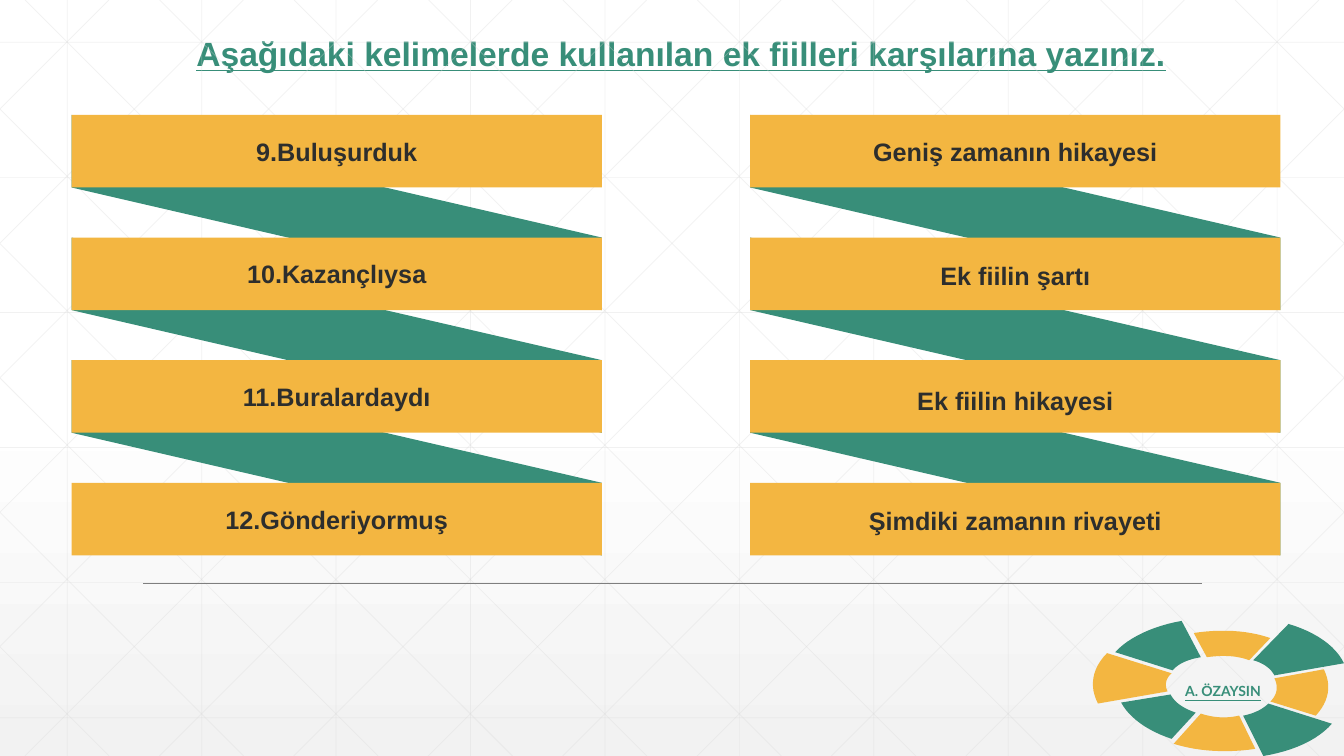
from dataclasses import dataclass

from lxml import etree
from pptx import Presentation
from pptx.dml.color import RGBColor
from pptx.enum.shapes import MSO_CONNECTOR, MSO_SHAPE
from pptx.enum.text import MSO_ANCHOR, PP_ALIGN
from pptx.oxml.ns import qn
from pptx.util import Inches, Pt

STRAIGHT = MSO_CONNECTOR.STRAIGHT
RECTANGLE = MSO_SHAPE.RECTANGLE
CENTER = PP_ALIGN.CENTER
MIDDLE = MSO_ANCHOR.MIDDLE
PAGE_WIDTH, PAGE_HEIGHT = 13.33, 7.5


@dataclass(frozen=True)
class Theme:
    green: str = "388E79"
    amber: str = "F3B641"
    ink: str = "2D2E2D"
    grid: str = "D9D9D9"
    rule: str = "7F7F7F"
    white: str = "FFFFFF"
    mist: str = "F2F2F2"
    font: str = "Arial"
    badge_font: str = "Lato"
    title_size: int = 24
    label_size: int = 18
    badge_size: int = 10


THEME = Theme()

QUESTIONS = [("9.Buluşurduk", 0), ("10.Kazançlıysa", 0),
             ("11.Buralardaydı", 0), ("12.Gönderiyormuş", 0)]
# Each label with its small downward shift
ANSWERS = [("Geniş zamanın hikayesi", 0), ("Ek fiilin şartı", 0.02),
           ("Ek fiilin hikayesi", 0.04), ("Şimdiki zamanın rivayeti", 0.01)]

# Ring segments in turn: two Bézier edges, relative to the ring's corner
RING_SEGMENTS = [
    [[(1.84, .54), (1.81, .48), (1.74, .42), (1.63, .39)],
     [(1.98, .03), (2.25, .11), (2.45, .25), (2.53, .42)]],
    [[(1.59, .39), (1.46, .34), (1.31, .34), (1.17, .36)],
     [(1.04, .12), (1.3, .08), (1.57, .09), (1.8, .17)]],
    [[(.26, .31), (.4, .16), (.64, .05), (.92, 0)],
     [(1.11, .36), (.99, .38), (.89, .42), (.83, .49)]],
    [[(.09, .82), (0, .65), (.03, .47), (.18, .32)],
     [(.82, .52), (.76, .57), (.75, .64), (.78, .7)]],
    [[(.82, 1.17), (.58, 1.09), (.4, .96), (.32, .81)],
     [(.81, .73), (.85, .81), (.94, .87), (1.06, .91)]],
    [[(1.65, 1.27), (1.38, 1.31), (1.1, 1.3), (.84, 1.22)],
     [(1.11, .92), (1.23, .96), (1.36, .97), (1.49, .94)]],
    [[(2.41, 1.02), (2.27, 1.18), (2.03, 1.29), (1.73, 1.34)],
     [(1.53, .94), (1.63, .92), (1.72, .88), (1.78, .82)]],
    [[(1.8, .8), (1.87, .73), (1.88, .65), (1.84, .57)],
     [(2.33, .48), (2.41, .64), (2.38, .8), (2.25, .94)]],
]


def paint(shape, color):
    shape.shadow.inherit = False
    shape.fill.solid()
    shape.fill.fore_color.rgb = RGBColor.from_string(color)
    shape.line.fill.background()


def add_polygon(page, points, color):
    corners = [(Inches(x), Inches(y)) for x, y in points]
    builder = page.shapes.build_freeform(*corners[0], scale=1.0)
    builder.add_line_segments(corners[1:], close=True)
    paint(builder.convert_to_shape(), color)


def add_line(page, start, end, *, color, width, alpha=None):
    line = page.shapes.add_connector(
        STRAIGHT, *(Inches(value) for value in (*start, *end)))
    line.line.width = Pt(width)
    line.line.color.rgb = RGBColor.from_string(color)
    properties = line._element.spPr
    if alpha:
        tint = next(properties.iter(qn("a:srgbClr")))
        etree.SubElement(tint, qn("a:alpha")).set("val", str(alpha * 1000))
    etree.SubElement(properties, qn("a:effectLst"))


def write_text(shape, text, *, size, color, font=THEME.font, underline=False,
               wrap=True):
    frame = shape.text_frame
    frame.word_wrap = wrap
    frame.vertical_anchor = MIDDLE
    para = frame.paragraphs[0]
    para.alignment = CENTER
    span = para.add_run()
    span.text = text
    span.font.name = font
    span.font.size = Pt(size)
    span.font.bold = True
    span.font.underline = underline
    span.font.color.rgb = RGBColor.from_string(color)


def add_label(page, text, left, top, width, height, **style):
    box = page.shapes.add_textbox(*map(Inches, (left, top, width, height)))
    write_text(box, text, **style)


def draw_backdrop(page, width, height):
    # Soft gradient
    fill = page.background.fill
    fill.gradient()
    fill.gradient_angle = 270
    for stop, position, color in zip(fill.gradient_stops, (0.53, 1),
                                     (THEME.white, THEME.mist)):
        stop.position = position
        stop.color.rgb = RGBColor.from_string(color)

    # Upright, level and crossing grid lines
    step = 4 / 3
    lines = [((step * (i + 0.5), 0), (step * (i + 0.5), height))
             for i in range(10)]
    lines += [((0, 0.42 + 1.34 * i), (width, 0.42 + 1.34 * i))
              for i in range(6)]
    for i in range(-5, 10):
        foot = 0.25 + step * i
        first, last = max(0, foot), min(width, foot + height)
        lines.append(((first, first - foot), (last, last - foot)))
        lines.append(((width - first, first - foot),
                      (width - last, last - foot)))
    for start, end in lines:
        add_line(page, start, end, color=THEME.grid, width=0.5, alpha=35)


def draw_title(page, text, left, top, width, height):
    title = page.shapes.title
    title.left, title.top, title.width, title.height = map(
        Inches, (left, top, width, height))
    write_text(title, text, size=THEME.title_size, color=THEME.green,
               underline=True)


def draw_ribbon(page, labels, left, top, width, height, band=0.72):
    pitch = (height - band) / (len(labels) - 1)
    right = left + width
    tops = [top + pitch * row for row in range(len(labels))]
    # Folds behind the bands
    for upper, lower in zip(tops, tops[1:]):
        add_polygon(page, [(left, upper), (left, upper + band),
                           (right, lower + band), (right, lower)],
                    THEME.green)
    # Bands and their labels
    for band_top in tops:
        paint(page.shapes.add_shape(
            RECTANGLE, *map(Inches, (left, band_top, width, band))),
            THEME.amber)
    for band_top, (text, shift) in zip(tops, labels):
        add_label(page, text, left, band_top + 0.16 + shift, width, 0.4,
                  size=THEME.label_size, color=THEME.ink)


def sample_curve(points, steps=12):
    for i in range(steps + 1):
        t = i / steps
        weights = ((1 - t) ** 3, 3 * t * (1 - t) ** 2,
                   3 * t * t * (1 - t), t ** 3)
        yield tuple(sum(w * point[axis] for w, point in zip(weights, points))
                    for axis in (0, 1))


def draw_ring(page, text, left, top):
    for i, edges in enumerate(RING_SEGMENTS):
        outline = [(left + x, top + y)
                   for edge in edges for x, y in sample_curve(edge)]
        add_polygon(page, outline, THEME.amber if i % 2 else THEME.green)
    add_label(page, text, left + 0.8, top + 0.56, 1.06, 0.27, wrap=False,
              size=THEME.badge_size, color=THEME.green,
              font=THEME.badge_font, underline=True)


def main():
    deck = Presentation()
    deck.slide_width = Inches(PAGE_WIDTH)
    deck.slide_height = Inches(PAGE_HEIGHT)
    page = deck.slides.add_slide(deck.slide_layouts[5])

    draw_backdrop(page, PAGE_WIDTH, PAGE_HEIGHT)
    add_line(page, (1.42, 5.79), (11.92, 5.79), color=THEME.rule, width=1)
    draw_title(page, "Aşağıdaki kelimelerde kullanılan ek fiilleri "
                     "karşılarına yazınız.", 0.71, 0.28, 12.09, 0.5)
    for labels, left in ((QUESTIONS, 0.71), (ANSWERS, 7.44)):
        draw_ribbon(page, labels, left, 1.14, 5.26, 4.37)
    draw_ring(page, "A. ÖZAYSIN", 10.8, 6.16)
    deck.save("out.pptx")


if __name__ == "__main__":
    main()
